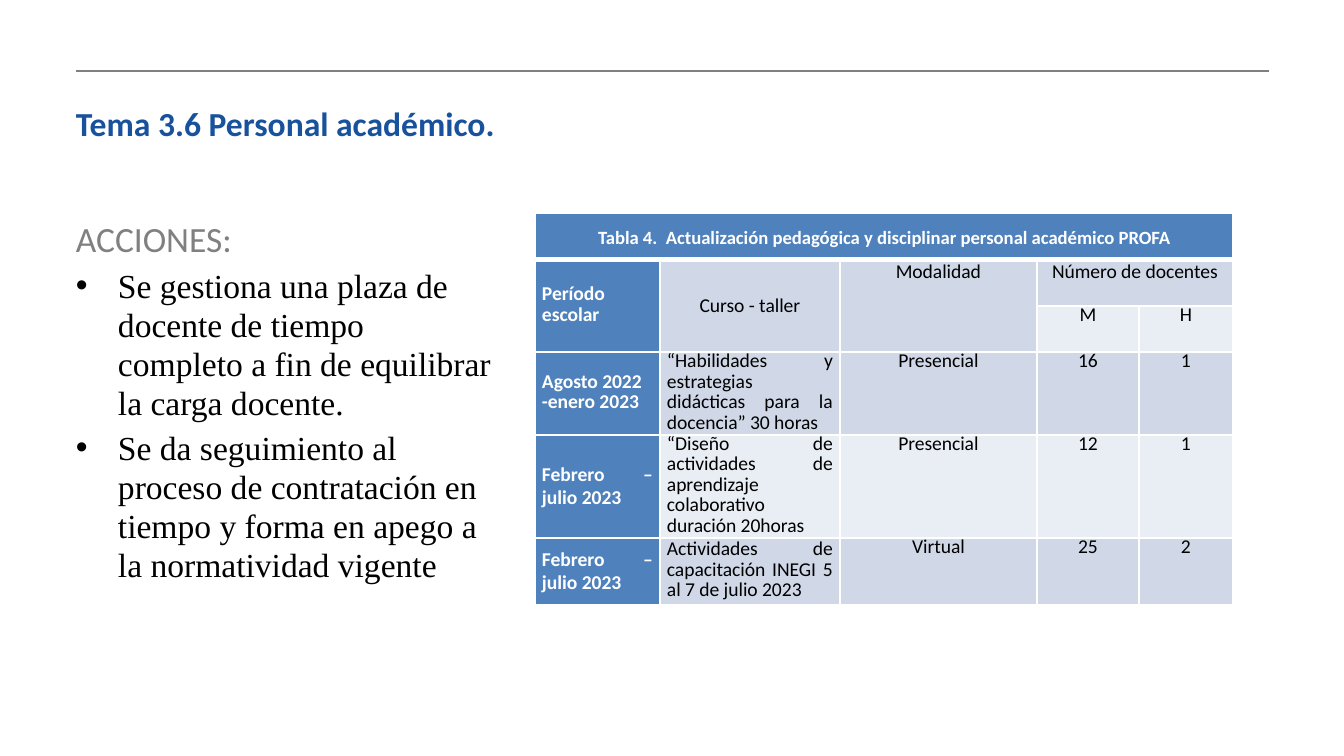
from lxml import etree
from pptx import Presentation
from pptx import util as u
from pptx.dml.color import RGBColor
from pptx.enum import shapes, text
from pptx.oxml.ns import qn

PX = 914400 / 134.4  # EMU in one px
WHITE = RGBColor(0xFF, 0xFF, 0xFF)
BLACK = RGBColor(0, 0, 0)
GRAY = RGBColor(0x80, 0x80, 0x80)
NAVY = RGBColor(0x18, 0x52, 0x9D)
BLUE = RGBColor(0x4F, 0x81, 0xBD)
BANDS = (RGBColor(0xE9, 0xED, 0xF4), RGBColor(0xD0, 0xD8, 0xE8))

LEFT, CENTER, JUSTIFY = (text.PP_ALIGN.LEFT, text.PP_ALIGN.CENTER,
                         text.PP_ALIGN.JUSTIFY)
TOP, MIDDLE = text.MSO_ANCHOR.TOP, text.MSO_ANCHOR.MIDDLE

ACTIONS = [
    "Se gestiona una plaza de docente de tiempo completo a fin de equilibrar la carga docente.",
    "Se da seguimiento al proceso de contratación en tiempo y forma en apego a la normatividad vigente",
]
TABLE_TITLE = "Tabla 4.  Actualización pedagógica y disciplinar personal académico PROFA"
COURSES = [
    ("Agosto 2022 -enero 2023",
     "“Habilidades y estrategias didácticas para la docencia” 30 horas",
     "Presencial", "16", "1"),
    ("Febrero – julio 2023",
     "“Diseño de actividades de aprendizaje colaborativo duración 20horas",
     "Presencial", "12", "1"),
    ("Febrero – julio 2023",
     "Actividades de capacitación INEGI 5 al 7 de julio 2023",
     "Virtual", "25", "2"),
]
COLUMNS = (125, 180, 197, 102, 94)
ROWS = (47, 46, 46, 83, 103, 67)


def px(n):
    return u.Emu(round(n * PX))


def write(p, words, size=10.5, font="Calibri", color=BLACK, bold=False,
          align=LEFT, line=None, before=0, after=0):
    p.alignment = align
    p.line_spacing = line
    p.space_before, p.space_after = u.Pt(before), u.Pt(after)
    r = p.add_run()
    r.text = words
    r.font.size, r.font.name, r.font.bold = u.Pt(size), font, bold
    r.font.color.rgb = color


def set_bullet(p, char=None, indent=0):
    pPr = p._p.get_or_add_pPr()
    pPr.set("marL", str(px(indent)))
    pPr.set("indent", str(-px(indent)))
    if char:
        etree.SubElement(pPr, qn("a:buFont"), typeface="Arial")
        etree.SubElement(pPr, qn("a:buChar"), char=char)
    else:
        etree.SubElement(pPr, qn("a:buNone"))


def place(sp, box, anchor):
    sp.left, sp.top, sp.width, sp.height = map(px, box)
    tf = sp.text_frame
    tf.word_wrap, tf.auto_size = True, text.MSO_AUTO_SIZE.NONE
    tf.vertical_anchor = anchor
    tf.margin_left = tf.margin_right = px(11)
    tf.margin_top = tf.margin_bottom = px(5)
    return tf


def add_header(s, box):
    x, y, w, h = box
    rule = s.shapes.add_connector(shapes.MSO_CONNECTOR.STRAIGHT,
                                  px(x + 11), px(y), px(x + w), px(y))
    rule.line.color.rgb, rule.line.width = GRAY, u.Pt(0.75)
    etree.SubElement(rule._element.spPr, qn("a:effectLst"))
    tf = place(s.shapes.title, (x, y + 27, 906, h - 27), text.MSO_ANCHOR.BOTTOM)
    write(tf.paragraphs[0], "Tema 3.6 Personal académico.", size=18,
          color=NAVY, bold=True)


def add_actions(s, box):
    tf = place(s.placeholders[1], box, TOP)
    p = tf.paragraphs[0]
    set_bullet(p)
    write(p, "ACCIONES:", size=19, color=GRAY, line=u.Pt(20.8))
    for action in ACTIONS:
        p = tf.add_paragraph()
        set_bullet(p, "•", 42)
        write(p, action, size=18, font="Times New Roman", line=u.Pt(20.8),
              before=3.6)


def set_borders(cell, top=1, bottom=1):
    tcPr = cell._tc.get_or_add_tcPr()
    for side, width in (("L", 1), ("R", 1), ("T", top), ("B", bottom)):
        ln = etree.SubElement(tcPr, qn("a:ln" + side), w=str(u.Pt(width)))
        fill = etree.SubElement(ln, qn("a:solidFill"))
        etree.SubElement(fill, qn("a:srgbClr"), val=str(WHITE))


def add_course_table(s, box):
    tb = s.shapes.add_table(len(ROWS), len(COLUMNS), *map(px, box)).table
    for column, width in zip(tb.columns, COLUMNS):
        column.width = px(width)
    for row, height in zip(tb.rows, ROWS):
        row.height = px(height)

    # Borders, fills and margins follow the row and column
    for i in range(len(ROWS)):
        for j in range(len(COLUMNS)):
            cell = tb.cell(i, j)
            set_borders(cell, top=3 if i == 1 else 1, bottom=3 if i == 0 else 1)
            cell.fill.solid()
            cell.fill.fore_color.rgb = BLUE if i == 0 or j == 0 else BANDS[i % 2]
            cell.margin_left = cell.margin_right = px(7)
            cell.margin_top = cell.margin_bottom = 0
    for first, last in (((0, 0), (0, 4)), ((1, 0), (2, 0)), ((1, 1), (2, 1)),
                        ((1, 2), (2, 2)), ((1, 3), (1, 4))):
        tb.cell(*first).merge(tb.cell(*last))

    def put(i, j, words, anchor=TOP, **fmt):
        cell = tb.cell(i, j)
        cell.vertical_anchor = anchor
        write(cell.text_frame.paragraphs[0], words, **fmt)

    # Headings
    tight = u.Pt(11)
    label = dict(anchor=MIDDLE, color=WHITE, bold=True)
    put(0, 0, TABLE_TITLE, size=10, align=CENTER, line=1.15, after=10, **label)
    put(1, 0, "Período escolar", line=tight, **label)
    put(1, 1, "Curso - taller", anchor=MIDDLE, align=CENTER)
    put(1, 2, "Modalidad", align=CENTER)
    put(1, 3, "Número de docentes", align=CENTER)
    for j, words in ((3, "M"), (4, "H")):
        put(2, j, words, align=CENTER, line=tight)

    # Courses
    for i, (period, course, *rest) in enumerate(COURSES, 3):
        first = i == 3
        put(i, 0, period, align=LEFT if first else JUSTIFY,
            line=tight if first else None, **label)
        put(i, 1, course, anchor=MIDDLE, align=JUSTIFY, line=tight)
        for j, words in enumerate(rest, 2):
            put(i, j, words, align=CENTER, line=tight)


def main():
    prs = Presentation()
    prs.slide_width, prs.slide_height = px(1344), px(756)
    s = prs.slides.add_slide(prs.slide_layouts[1])
    add_header(s, (65, 71, 1204, 77))
    add_course_table(s, (535, 213, sum(COLUMNS), sum(ROWS)))
    add_actions(s, (65, 216, 442, 456))
    prs.save("out.pptx")


if __name__ == "__main__":
    main()
